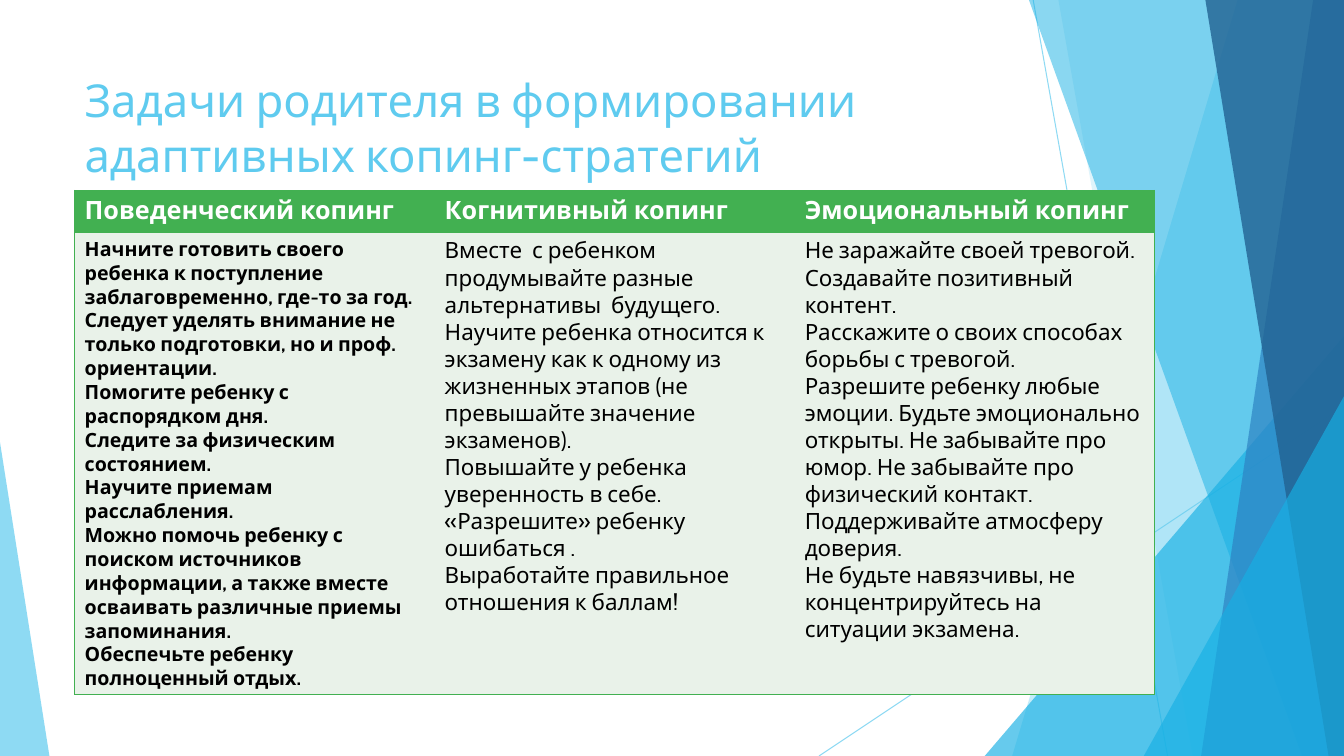
from lxml import etree
from pptx import Presentation
from pptx.dml.color import RGBColor
from pptx.enum.shapes import MSO_CONNECTOR as CONNECTOR, MSO_SHAPE as SHAPE
from pptx.enum.text import MSO_ANCHOR as ANCHOR
from pptx.oxml.ns import qn
from pptx.util import Pt

FONT = "Cabin"
WHITE = RGBColor(0xFF, 0xFF, 0xFF)
BLACK = RGBColor(0x00, 0x00, 0x00)
SKY = RGBColor(0x5F, 0xCB, 0xEF)
CYAN = RGBColor(0x17, 0xB0, 0xE4)
BLUE = RGBColor(0x2E, 0x83, 0xC3)
NAVY = RGBColor(0x22, 0x62, 0x92)
GREEN = RGBColor(0x42, 0xB0, 0x51)
PALE_GREEN = RGBColor(0xE9, 0xF2, 0xE9)

WIDTH, HEIGHT = 960, 540
TITLE = "Задачи родителя в формировании адаптивных копинг-стратегий"

# Heading, text size, bold, advice
COPING_TYPES = [
    ("Поведенческий копинг", 14, True, [
        "Начните готовить своего ребенка к поступление заблаговременно, где-то за год. "
        "Следует уделять внимание не только подготовки, но и проф. ориентации.",
        "Помогите ребенку с распорядком дня.",
        "Следите за физическим состоянием.",
        "Научите приемам расслабления.",
        "Можно помочь ребенку с поиском источников информации, а также вместе "
        "осваивать различные приемы запоминания.",
        "Обеспечьте ребенку полноценный отдых.",
    ]),
    ("Когнитивный копинг", 16, False, [
        "Вместе  с ребенком продумывайте разные альтернативы  будущего.",
        "Научите ребенка относится к экзамену как к одному из жизненных этапов "
        "(не превышайте значение экзаменов).",
        "Повышайте у ребенка уверенность в себе.",
        "«Разрешите» ребенку ошибаться .",
        "Выработайте правильное отношения к баллам!",
    ]),
    ("Эмоциональный копинг", 16, False, [
        "Не заражайте своей тревогой.",
        "Создавайте позитивный контент.",
        "Расскажите о своих способах борьбы с тревогой.",
        "Разрешите ребенку любые эмоции. Будьте эмоционально открыты. "
        "Не забывайте про юмор. Не забывайте про физический контакт.",
        "Поддерживайте атмосферу доверия.",
        "Не будьте навязчивы, не концентрируйтесь на ситуации экзамена.",
    ]),
]


def set_alpha(color_parent, percent):
    color = next(color_parent.iter(qn("a:srgbClr")))
    etree.SubElement(color, qn("a:alpha")).set("val", str(percent * 1000))


def paint(shape, color, opacity):
    shape.shadow.inherit = False
    shape.fill.solid()
    shape.fill.fore_color.rgb = color
    shape.line.fill.background()
    set_alpha(shape.fill._xPr, opacity)


def add_ray(slide, start, end):
    ray = slide.shapes.add_connector(CONNECTOR.STRAIGHT, *map(Pt, start + end))
    ray.line.color.rgb = SKY
    ray.line.width = Pt(0.75)
    properties = ray._element.spPr
    set_alpha(properties, 70)
    etree.SubElement(properties, qn("a:effectLst"))


def add_facet(slide, box, top_x, bottom_x, color, opacity):
    """Band from a slanted left edge to the right edge of the box."""
    left, top, width, height = box
    right, bottom = left + width, top + height
    outline = slide.shapes.build_freeform(left + top_x, top, scale=Pt(1))
    outline.add_line_segments(
        [(right, top), (right, bottom), (left + bottom_x, bottom)], close=True)
    paint(outline.convert_to_shape(), color, opacity)


def add_wedge(slide, box, apex, color, opacity):
    wedge = slide.shapes.add_shape(SHAPE.ISOSCELES_TRIANGLE, *map(Pt, box))
    wedge.adjustments[0] = apex
    paint(wedge, color, opacity)


def add_backdrop(slide, box):
    left, top, width, height = box
    right, bottom = left + width, top + height

    def corner_wedge(wedge_width, wedge_height):
        add_wedge(slide, (right - wedge_width, bottom - wedge_height,
                          wedge_width, wedge_height), 1, CYAN, 66)

    add_ray(slide, (left + 738, top), (left + 834, bottom))
    add_ray(slide, (right, top + 290), (left + 585, bottom))
    add_facet(slide, box, 884, 723, SKY, 36)
    add_facet(slide, box, 756, 852, SKY, 20)
    corner_wedge(256.6, 300)
    add_facet(slide, box, 735, 929.5, CYAN, 50)
    add_facet(slide, box, 938, 858, BLUE, 70)
    add_facet(slide, box, 861, 949, NAVY, 80)
    corner_wedge(143, 257)
    add_wedge(slide, (left, bottom - 224, 35.3, 224), 0, SKY, 70)


def add_run(paragraph, text, size, color, bold=False):
    run = paragraph.add_run()
    run.text = text
    run.font.name = FONT
    run.font.size = Pt(size)
    run.font.bold = bold
    run.font.color.rgb = color


def add_title(slide, box):
    frame = slide.shapes.add_textbox(*map(Pt, box)).text_frame
    frame.word_wrap = True
    frame.vertical_anchor = ANCHOR.TOP
    add_run(frame.paragraphs[0], TITLE, 32.4, SKY)


def set_borders(cell, visible):
    """Green line on the visible sides, none on the others."""
    properties = cell._tc.get_or_add_tcPr()
    for index, side in enumerate("LRTB"):
        border = etree.Element(qn(f"a:ln{side}"), w=str(Pt(1)))
        if side in visible:
            fill = etree.SubElement(border, qn("a:solidFill"))
            etree.SubElement(fill, qn("a:srgbClr"), val=str(GREEN))
        else:
            etree.SubElement(border, qn("a:noFill"))
        properties.insert(index, border)


def fill_cell(cell, lines, size, color, bold, background, borders):
    cell.fill.solid()
    cell.fill.fore_color.rgb = background
    set_borders(cell, borders)
    frame = cell.text_frame
    for index, line in enumerate(lines):
        paragraph = frame.add_paragraph() if index else frame.paragraphs[0]
        add_run(paragraph, line, size, color, bold)


def add_coping_table(slide, box):
    header_height = 30
    count = len(COPING_TYPES)
    table = slide.shapes.add_table(2, count, *map(Pt, box)).table
    table.horz_banding = False
    table.rows[0].height = Pt(header_height)
    table.rows[1].height = Pt(box[3] - header_height)
    for index, (heading, size, bold, advice) in enumerate(COPING_TYPES):
        table.columns[index].width = Pt(box[2] / count)
        borders = "TB" + ("L" if index == 0 else "") + ("R" if index == count - 1 else "")
        fill_cell(table.cell(0, index), [heading], 18, WHITE, True, GREEN, borders)
        fill_cell(table.cell(1, index), advice, size, BLACK, bold, PALE_GREEN, borders)


def main():
    deck = Presentation()
    deck.slide_width, deck.slide_height = Pt(WIDTH), Pt(HEIGHT)
    slide = deck.slides.add_slide(deck.slide_layouts[6])
    slide.background.fill.solid()
    slide.background.fill.fore_color.rgb = WHITE
    add_backdrop(slide, (0, 0, WIDTH, HEIGHT))
    add_title(slide, (53.3, 48.2, 705, 78.5))
    add_coping_table(slide, (53.3, 136, 771.6, 360))
    deck.save("out.pptx")


if __name__ == "__main__":
    main()
